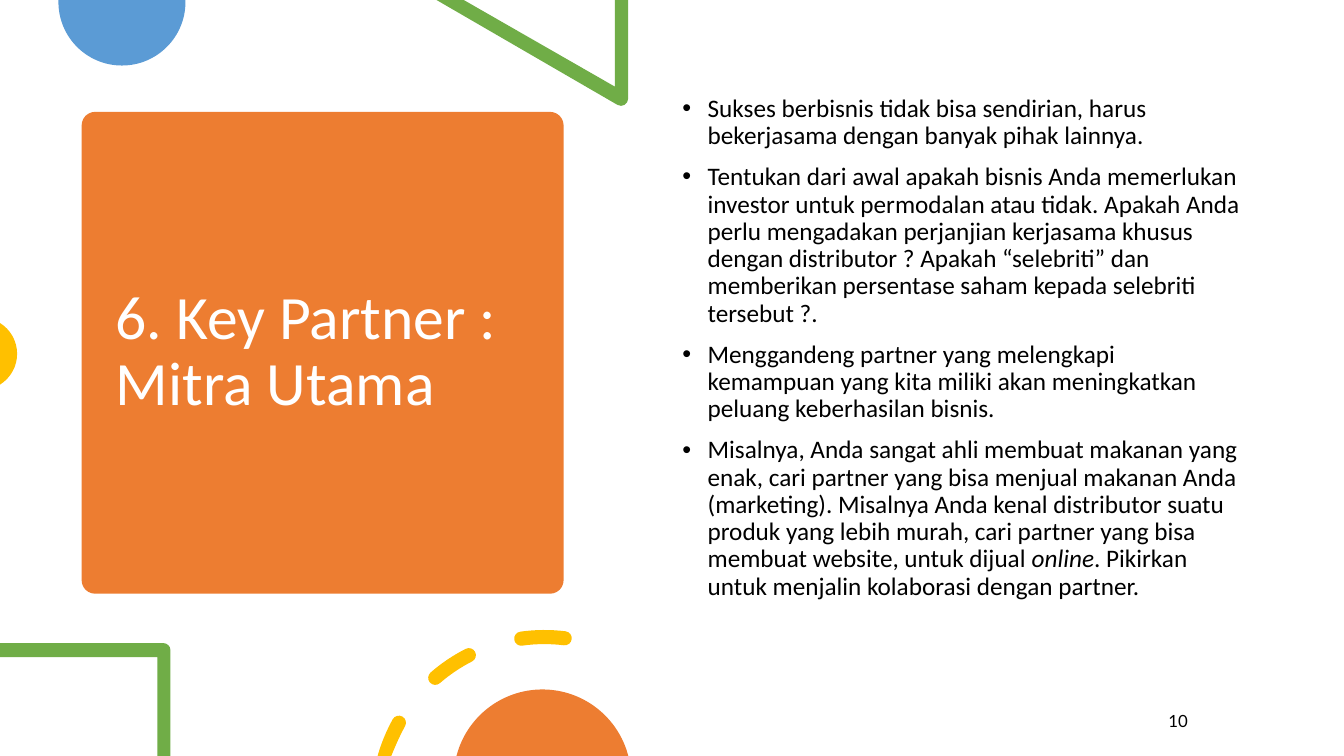
import math

import pptx
import pptx.dml.color
import pptx.enum.shapes
import pptx.enum.text
import pptx.oxml.ns
import pptx.util
from lxml import etree

EMU_PER_PX = 9144
SLIDE_WIDTH, SLIDE_HEIGHT = 1333, 750
COLORS = {
    "orange": "ED7D31",
    "blue": "5B9BD5",
    "green": "70AD47",
    "yellow": "FFC000",
    "white": "FFFFFF",
    "black": "000000",
}
BODY = [
    ["Sukses berbisnis tidak bisa sendirian, harus bekerjasama dengan banyak pihak lainnya."],
    ["Tentukan dari awal apakah bisnis Anda memerlukan investor untuk permodalan atau tidak. "
     "Apakah Anda perlu mengadakan perjanjian kerjasama khusus dengan distributor ? "
     "Apakah “selebriti” dan memberikan persentase saham kepada selebriti tersebut ?."],
    ["Menggandeng partner yang melengkapi kemampuan yang kita miliki akan meningkatkan "
     "peluang keberhasilan bisnis."],
    ["Misalnya, Anda sangat ahli membuat makanan yang enak, cari partner yang bisa menjual "
     "makanan Anda (marketing). Misalnya Anda kenal distributor suatu produk yang lebih murah, "
     "cari partner yang bisa membuat website, untuk dijual ",
     "online",
     ". Pikirkan untuk menjalin kolaborasi dengan partner."],
]
ITALIC_WORDS = {"online"}
RING_CENTER, RING_RADIUS, DASH_HALF_WIDTH = (540, 797), 165, 7
DASH_ANGLES = [(196, 209), (229, 243), (262, 277)]


def px(length):
    return pptx.util.Emu(round(length * EMU_PER_PX))


def rgb(name):
    return pptx.dml.color.RGBColor.from_string(COLORS[name])


def polar(center, radius, degrees):
    angle = math.radians(degrees)
    return center[0] + radius * math.cos(angle), center[1] + radius * math.sin(angle)


def corners(*points):
    """Straight segments: one point each."""
    return [(point,) for point in points]


def arc(center, radius, start, end, pieces=1):
    """Start point, then cubic segments of three points; degrees run clockwise."""
    step = (end - start) / pieces
    reach = 4 / 3 * math.tan(math.radians(step) / 4)
    control_radius = radius * math.hypot(1, reach)
    swing = math.degrees(math.atan(reach))
    segments = corners(polar(center, radius, start))
    for piece in range(pieces):
        begin = start + piece * step
        segments.append((polar(center, control_radius, begin + swing),
                         polar(center, control_radius, begin + step - swing),
                         polar(center, radius, begin + step)))
    return segments


def ring_dash(start, end):
    """Outline of one round-ended dash of the ring, cut at the slide bottom."""
    first, last = (polar(RING_CENTER, RING_RADIUS, angle) for angle in (start, end))
    outline = (
        arc(RING_CENTER, RING_RADIUS + DASH_HALF_WIDTH, start, end)
        + arc(last, DASH_HALF_WIDTH, end, end + 180, 2)[1:]
        + arc(RING_CENTER, RING_RADIUS - DASH_HALF_WIDTH, end, start)[1:]
        + arc(first, DASH_HALF_WIDTH, start + 180, start + 360, 2)[1:]
    )
    return [tuple((x, min(y, SLIDE_HEIGHT)) for x, y in segment) for segment in outline]


def paint(shape, color):
    shape.shadow.inherit = False
    shape.fill.solid()
    shape.fill.fore_color.rgb = rgb(color)
    shape.line.fill.background()


def bend(shape, segments):
    """Join the three straight steps of each cubic segment into one curve."""
    path = next(shape._element.iter(pptx.oxml.ns.qn("a:path")))
    steps = [step for step in path if len(step)]
    for segment in segments:
        group, steps = steps[:len(segment)], steps[len(segment):]
        if len(group) == 3:
            curve = etree.Element(pptx.oxml.ns.qn("a:cubicBezTo"))
            group[0].addprevious(curve)
            for step in group:
                curve.append(step[0])
                path.remove(step)


def add_outline(slide, color, *outlines):
    paths = [[(px(x), px(y)) for segment in outline for x, y in segment] for outline in outlines]
    builder = slide.shapes.build_freeform(*paths[0][0], scale=1.0)
    for index, path in enumerate(paths):
        if index:
            builder.move_to(*path[0])
        builder.add_line_segments(path[1:], close=True)
    shape = builder.convert_to_shape()
    bend(shape, [segment for outline in outlines for segment in outline])
    paint(shape, color)


def add_card(slide, left, top, size):
    card = slide.shapes.add_shape(
        pptx.enum.shapes.MSO_SHAPE.ROUNDED_RECTANGLE, px(left), px(top), px(size), px(size))
    card.adjustments[0] = 0.028
    paint(card, "orange")


def add_text_frame(slide, left, top, width, height, anchor):
    frame = slide.shapes.add_textbox(px(left), px(top), px(width), px(height)).text_frame
    frame.word_wrap = True
    frame.vertical_anchor = anchor
    return frame


def set_font(paragraph, name, size, color):
    paragraph.font.name = name
    paragraph.font.size = pptx.util.Pt(size)
    paragraph.font.color.rgb = rgb(color)


def add_bullet(paragraph):
    properties = paragraph._p.get_or_add_pPr()
    properties.set("marL", str(px(25)))
    properties.set("indent", str(-px(25)))
    bullet = etree.Element(pptx.oxml.ns.qn("a:buChar"), char="•")
    properties.find(pptx.oxml.ns.qn("a:spcBef")).addnext(bullet)
    bullet.addprevious(etree.Element(pptx.oxml.ns.qn("a:buFont"), typeface="Arial"))


def add_body(slide):
    frame = add_text_frame(slide, 667, 90, 575, 535, pptx.enum.text.MSO_ANCHOR.TOP)
    for index, pieces in enumerate(BODY):
        paragraph = frame.add_paragraph() if index else frame.paragraphs[0]
        for piece in pieces:
            run = paragraph.add_run()
            run.text = piece
            if piece in ITALIC_WORDS:
                run.font.italic = True
        paragraph.line_spacing = 0.9
        paragraph.space_before = pptx.util.Pt(10)
        set_font(paragraph, "Calibri", 18, "black")
        add_bullet(paragraph)


def add_line_of_text(slide, text, box, font, size, color):
    frame = add_text_frame(slide, *box, pptx.enum.text.MSO_ANCHOR.MIDDLE)
    paragraph = frame.paragraphs[0]
    paragraph.text = text
    set_font(paragraph, font, size, color)
    return paragraph


def main():
    presentation = pptx.Presentation()
    presentation.slide_width = px(SLIDE_WIDTH)
    presentation.slide_height = px(SLIDE_HEIGHT)
    slide = presentation.slides.add_slide(presentation.slide_layouts[6])

    add_card(slide, 81, 111, 478)
    title = add_line_of_text(slide, "6. Key Partner : Mitra Utama",
                             (105, 122, 431, 456), "Calibri", 44, "white")
    title.line_spacing = 0.9
    add_outline(slide, "blue", corners((184, 0), (184, 2))
                + arc((121, 2), 63, 0, 180, 2)[1:] + corners((58, 0)))
    add_outline(slide, "green",
                corners((623, 0), (610, 0), (610, 86), (460, 0), (433, 0))
                + arc((616, 98), 7, 120, 0, 2))
    add_outline(slide, "yellow", arc((-19, 351), 36, -58, 58, 2))
    add_body(slide)
    add_outline(slide, "green",
                corners((0, 638), (0, 652), (156, 652), (156, 750), (169, 750))
                + arc((162, 645), 7, 0, -90))
    add_outline(slide, "yellow", *(ring_dash(*angles) for angles in DASH_ANGLES))
    add_outline(slide, "orange", arc((538, 772), 88, 194.5, 345.5, 2))
    number = add_line_of_text(slide, "10", (1149, 695, 93, 40), "Lato", 12, "black")
    number.space_after = pptx.util.Pt(6)

    presentation.save("out.pptx")


if __name__ == "__main__":
    main()
